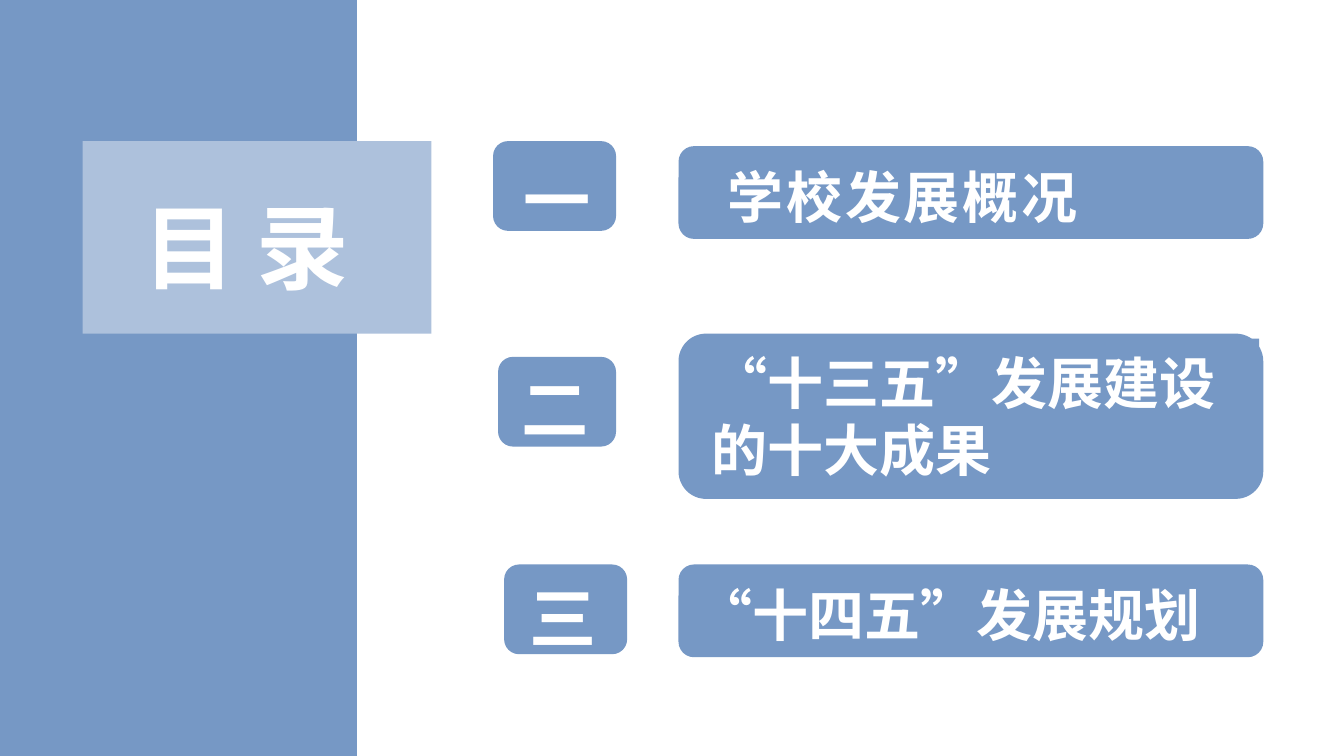
from dataclasses import dataclass

from lxml import etree
from pptx import Presentation
from pptx.dml.color import RGBColor
from pptx.enum import shapes, text
from pptx.oxml import ns
from pptx.util import Inches, Pt

FONT = "Noto Sans CJK SC"
BLUE, PALE, WHITE = "7698C5", "ADC1DC", "FFFFFF"
RECT = shapes.MSO_SHAPE.RECTANGLE
ROUNDED = shapes.MSO_SHAPE.ROUNDED_RECTANGLE
CENTER, JUSTIFY = text.PP_ALIGN.CENTER, text.PP_ALIGN.JUSTIFY
Box = tuple[float, float, float, float]


@dataclass
class Chapter:
    number: str
    heading: str
    badge: Box
    number_box: Box
    bar: Box
    heading_box: Box
    align: text.PP_ALIGN = JUSTIFY
    spacing: int = 0


CHAPTERS = [
    Chapter("一", "学校发展概况", (4.89, 1.4, 1.22, 0.89), (5, 1.46, 1.05, 0.91),
            (6.73, 1.45, 5.8, 0.92), (7.12, 1.51, 4.64, 0.77), spacing=2),
    Chapter("二", "“十三五”发展建设的十大成果", (4.94, 3.54, 1.17, 0.89), (5, 3.53, 1.01, 0.91),
            (6.73, 3.31, 5.8, 1.64), (6.96, 3.36, 5.53, 1.45), align=text.PP_ALIGN.LEFT),
    Chapter("三", "“十四五”发展规划", (5, 5.6, 1.22, 0.89), (5.06, 5.61, 1.05, 0.91),
            (6.73, 5.6, 5.8, 0.92), (6.81, 5.66, 5.63, 0.77)),
]


def rgb(color: str) -> RGBColor:
    return RGBColor.from_string(color)


def add_panel(parent, kind: shapes.MSO_SHAPE, box: Box, color: str):
    panel = parent.add_shape(kind, *map(Inches, box))
    panel.shadow.inherit = False
    panel.fill.solid()
    panel.fill.fore_color.rgb = rgb(color)
    panel.line.fill.background()
    return panel


def write(shape, words: str, size: int, align: text.PP_ALIGN, spacing: int = 0) -> None:
    """Set bold white text on lines 1.2 times the font size, from the top of the shape."""
    frame = shape.text_frame
    frame.word_wrap = True
    frame.auto_size = text.MSO_AUTO_SIZE.NONE
    frame.vertical_anchor = text.MSO_ANCHOR.TOP
    frame.margin_left = frame.margin_right = Inches(0.1)
    frame.margin_top = Inches(0.05) + Pt(0.09 * size)
    frame.margin_bottom = 0
    paragraph = frame.paragraphs[0]
    paragraph.text = words
    paragraph.alignment = align
    paragraph.line_spacing = Pt(1.2 * size)
    font = paragraph.font
    font.size, font.bold, font.name = Pt(size), True, FONT
    font.color.rgb = rgb(WHITE)
    properties = paragraph._p.pPr.find(ns.qn("a:defRPr"))
    if spacing:
        properties.set("spc", str(spacing * 100))
    east_asian = etree.Element(ns.qn("a:ea"), typeface=FONT)
    properties.find(ns.qn("a:latin")).addnext(east_asian)


def add_chapter(slide, chapter: Chapter) -> None:
    group = slide.shapes.add_group_shape().shapes
    add_panel(group, ROUNDED, chapter.badge, BLUE)
    number = group.add_textbox(*map(Inches, chapter.number_box))
    write(number, chapter.number, 48, CENTER)
    add_panel(group, ROUNDED, chapter.bar, BLUE)
    heading = add_panel(group, RECT, chapter.heading_box, BLUE)
    write(heading, chapter.heading, 40, chapter.align, chapter.spacing)


def main() -> None:
    deck = Presentation()
    deck.slide_width, deck.slide_height = Inches(13.33), Inches(7.5)
    slide = deck.slides.add_slide(deck.slide_layouts[5])
    add_panel(slide.shapes, RECT, (0, 0, 3.54, 7.5), BLUE)
    add_panel(slide.shapes, RECT, (0.82, 1.4, 3.46, 1.91), PALE)

    title = slide.shapes.title
    title.left, title.top, title.width, title.height = map(Inches, (1.32, 1.75, 2.45, 1.21))
    write(title, "目 录", 66, JUSTIFY)
    slide.shapes._spTree.append(title._element)  # bring the title in front of its panels

    for chapter in CHAPTERS:
        add_chapter(slide, chapter)
    deck.save("out.pptx")


if __name__ == "__main__":
    main()
